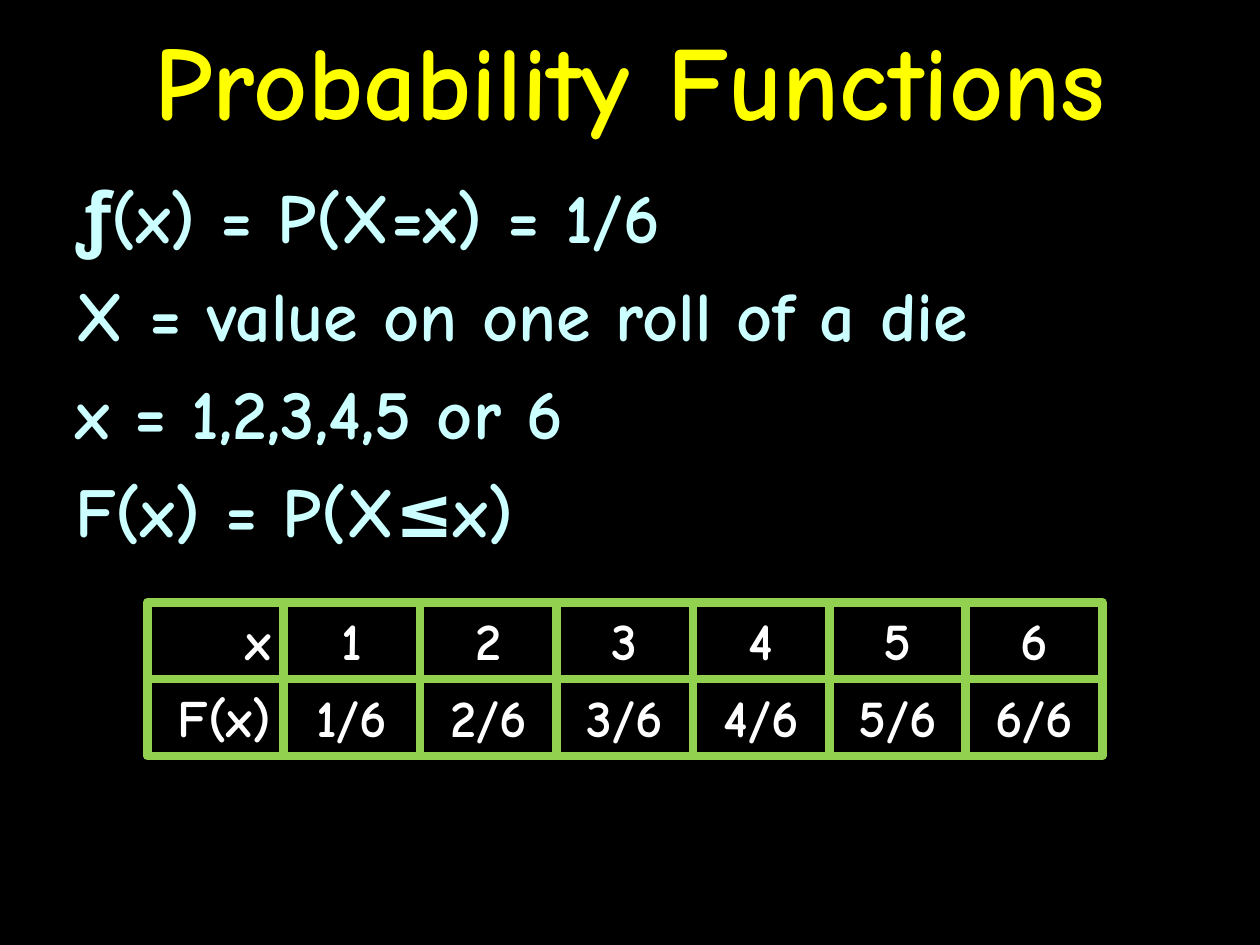
"""Build the probability functions slide with its grid of F(x) for a die."""
import pptx
import pptx.util
import pptx.dml.color
import pptx.enum.shapes
import pptx.enum.text

Cm = pptx.util.Cm
Pt = pptx.util.Pt
RGBColor = pptx.dml.color.RGBColor
ALIGN = pptx.enum.text.PP_ALIGN
ANCHOR = pptx.enum.text.MSO_ANCHOR
RECT = pptx.enum.shapes.MSO_SHAPE.RECTANGLE
GROW = pptx.enum.text.MSO_AUTO_SIZE.SHAPE_TO_FIT_TEXT

BLACK = RGBColor(0x00, 0x00, 0x00)
YELLOW = RGBColor(0xFF, 0xFF, 0x00)
CYAN = RGBColor(0xCC, 0xFF, 0xFF)
WHITE = RGBColor(0xFF, 0xFF, 0xFF)
GREEN = RGBColor(0x92, 0xD0, 0x50)


def style(frame, size, color, align, gap=0):
    for para in frame.paragraphs:
        para.alignment = align
        para.space_before = Pt(gap)
        for run in para.runs:
            run.font.name = "Comic Neue"
            run.font.size = Pt(size)
            run.font.bold = True
            run.font.color.rgb = color


deck = pptx.Presentation()
deck.slide_width = Cm(25.4)
deck.slide_height = Cm(19.05)
slide = deck.slides.add_slide(deck.slide_layouts[6])
slide.background.fill.solid()
slide.background.fill.fore_color.rgb = BLACK

body = slide.shapes.add_textbox(Cm(1.27), Cm(3.38), Cm(22.86), Cm(15.67)).text_frame
body.word_wrap = True
body.text = "\n".join([
    "ƒ(x) = P(X=x) = 1/6",
    "X = value on one roll of a die",
    "x = 1,2,3,4,5 or 6",
    "F(x) = P(X≤x)",
])
style(body, 40, CYAN, ALIGN.LEFT, 8)

title = slide.shapes.add_textbox(Cm(0), Cm(0), Cm(25.4), Cm(3.18)).text_frame
title.word_wrap = True
title.vertical_anchor = ANCHOR.MIDDLE
title.text = "Probability Functions"
style(title, 60, YELLOW, ALIGN.CENTER)

pairs = [("x", "F(x)")] + [(f"{n}", f"{n}/6") for n in range(1, 7)]
left, top, wide, high = Cm(2.97), Cm(12.14), Cm(2.75), Cm(1.55)
grid = slide.shapes.add_group_shape()
for c, pair in enumerate(pairs):
    for r, text in enumerate(pair):
        cell = grid.shapes.add_shape(RECT, left + c * wide, top + r * high, wide, high)
        cell.shadow.inherit = False
        cell.fill.background()
        cell.line.color.rgb = GREEN
        cell.line.width = Pt(5)
        frame = cell.text_frame
        frame.word_wrap = True
        frame.auto_size = GROW
        frame.vertical_anchor = ANCHOR.TOP
        frame.text = text
        style(frame, 30, WHITE, ALIGN.CENTER if c else ALIGN.RIGHT)

deck.save("out.pptx")
